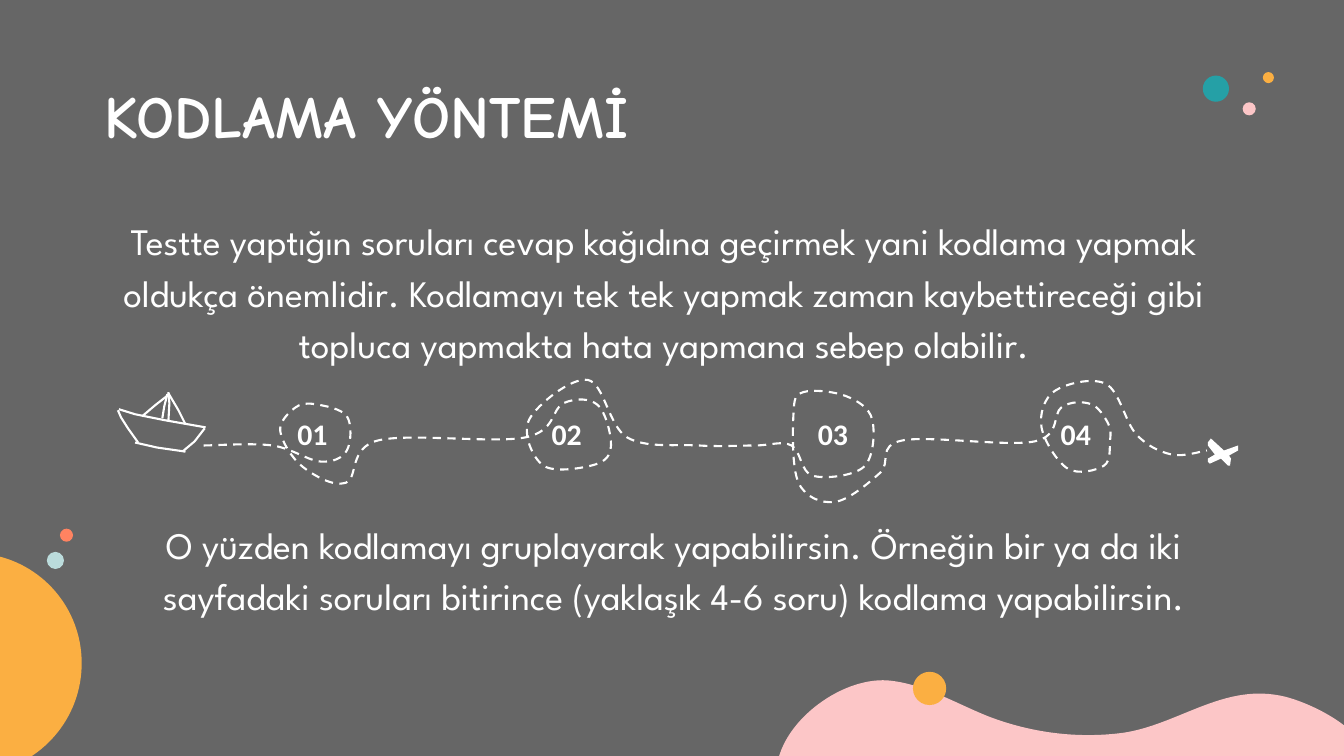
from dataclasses import dataclass
from itertools import pairwise

from lxml.etree import SubElement
from pptx import Presentation
from pptx.dml.color import RGBColor
from pptx.enum.dml import MSO_LINE_DASH_STYLE as Dash
from pptx.enum.shapes import MSO_SHAPE as Preset
from pptx.enum.text import MSO_ANCHOR as Anchor, PP_ALIGN as Align
from pptx.oxml.ns import qn
from pptx.util import Inches, Pt

Point = tuple[float, float]

GRAY, WHITE, PINK, ORANGE = "666666", "FFFFFF", "FCC6C7", "FBAF42"
TEAL, MINT, CORAL = "25A0A6", "BBDCDC", "FF8361"


@dataclass
class Dot:
    x: float
    y: float
    size: float
    color: str


@dataclass
class Label:
    text: str
    left: float
    top: float
    width: float
    height: float
    font: str
    size: float
    bold: bool = False
    align: Align = Align.CENTER
    spacing: float = 1.0


DOTS = [
    Dot(0.55, 5.56, 0.17, MINT),
    Dot(0.66, 5.31, 0.13, CORAL),
    Dot(9.22, 6.83, 0.33, ORANGE),
    Dot(12.58, 0.77, 0.11, ORANGE),
    Dot(12.39, 1.08, 0.13, PINK),
    Dot(12.06, 0.88, 0.26, TEAL),
]

WAVE: list[Point] = [
    (13.56, 7.55),
    (13.56, 7.22), (12.93, 6.94), (12.69, 6.9),
    (12.12, 6.79), (11.68, 7.19), (11.14, 7.27),
    (10.69, 7.33), (10.23, 7.27), (9.81, 7.11),
    (9.48, 6.98), (9.16, 6.78), (8.8, 6.75),
    (8.33, 6.72), (7.72, 7.18), (7.7, 7.66),
]
SUN: list[Point] = [
    (-0.11, 7.67),
    (0.41, 7.58), (0.81, 7.13), (0.81, 6.58),
    (0.81, 6.03), (0.41, 5.58), (-0.11, 5.5),
]

BOAT: list[list[Point]] = [
    [(1.18, 4.06), (1.34, 4.11), (1.64, 4.17), (2.04, 4.24)],
    [(1.17, 4.07), (1.2, 4.14), (1.27, 4.25), (1.37, 4.39)],
    [(1.34, 4.39), (1.56, 4.44), (1.84, 4.48)],
    [(2.03, 4.25), (1.93, 4.38), (1.81, 4.48)],
    [(1.68, 3.91), (1.54, 4.02), (1.41, 4.13)],
    [(1.67, 3.9), (1.77, 4.07), (1.84, 4.21)],
    [(1.66, 3.91), (1.63, 4.03), (1.61, 4.15)],
    [(1.67, 3.89), (1.68, 4.0), (1.67, 4.18)],
]

ROUTE: list[Point] = [
    (2.02, 4.42), (2.7, 4.42), (3.18, 4.58), (3.44, 4.47), (3.44, 4.13),
    (3.12, 4.01), (2.92, 4.05), (2.78, 4.28), (3, 4.63), (3.43, 4.79),
    (3.75, 4.37), (5.21, 4.34), (5.59, 4), (5.93, 4.02), (6.06, 4.42),
    (5.9, 4.61), (5.39, 4.62), (5.25, 4.16), (5.83, 3.77), (6.22, 4.34),
    (6.93, 4.42), (7.49, 4.42), (7.85, 4.42), (8.06, 4.72), (8.57, 4.63),
    (8.65, 4.16), (8.39, 3.93), (7.97, 3.89), (7.87, 4.1), (7.92, 4.79),
    (8.28, 4.98), (8.73, 4.69), (8.95, 4.37), (10.26, 4.38), (10.53, 4.04),
    (10.82, 4.01), (10.99, 4.2), (11.01, 4.37), (10.95, 4.62), (10.59, 4.65),
    (10.33, 4.24), (10.46, 3.88), (10.97, 3.81), (11.27, 4.31), (11.62, 4.51),
    (11.97, 4.47),
]

CROSS: list[Point] = [
    (12.01, 4.35), (11.98, 4.39), (11.98, 4.42), (12.05, 4.51), (11.98, 4.55),
    (11.98, 4.58), (12, 4.6), (12.11, 4.55), (12.18, 4.62), (12.2, 4.62),
    (12.21, 4.55), (12.19, 4.52), (12.28, 4.47), (12.28, 4.42), (12.14, 4.47),
]

INTRO = (
    "Testte yaptığın soruları cevap kağıdına geçirmek yani kodlama yapmak "
    "oldukça önemlidir. Kodlamayı tek tek yapmak zaman kaybettireceği gibi "
    "topluca yapmakta hata yapmana sebep olabilir."
)
ADVICE = (
    "O yüzden kodlamayı gruplayarak yapabilirsin. Örneğin bir ya da iki "
    "sayfadaki soruları bitirince (yaklaşık 4-6 soru) kodlama yapabilirsin."
)
STOP_LEFTS = [2.76, 5.28, 7.92, 10.33]
LABELS = [
    Label("KODLAMA YÖNTEMİ", 0.91, 0.65, 11.37, 0.84, "Comic Neue", 42.7, True, Align.LEFT),
    *(
        Label(f"{number:02}", left, 3.99, 0.68, 0.56, "Calibri", 21.3, True)
        for number, left in enumerate(STOP_LEFTS, 1)
    ),
    Label(INTRO, 0.89, 1.97, 11.4, 1.57, "League Spartan", 26.7, spacing=1.15),
    Label(ADVICE, 1.17, 4.98, 11.04, 1.67, "League Spartan", 26.7, spacing=1.15),
]


def rgb(color: str) -> RGBColor:
    return RGBColor.from_string(color)


def spline(anchors: list[Point]) -> list[Point]:
    padded = [anchors[0], *anchors, anchors[-1]]
    handles = [
        ((after[0] - before[0]) / 6, (after[1] - before[1]) / 6)
        for before, after in zip(padded, padded[2:])
    ]
    points = [anchors[0]]
    for (a, u), (b, v) in pairwise(zip(anchors, handles)):
        points += [(a[0] + u[0], a[1] + u[1]), (b[0] - v[0], b[1] - v[1]), b]
    return points


def draw_outline(page, points: list[Point], close: bool = False):
    start, *rest = [(Inches(x), Inches(y)) for x, y in points]
    builder = page.shapes.build_freeform(*start, scale=1.0)
    builder.add_line_segments(rest, close=close)
    shape = builder.convert_to_shape()
    shape.shadow.inherit = False
    return shape


def bend(shape) -> None:
    segments = list(shape.element.iter(qn("a:lnTo")))
    for first in range(0, len(segments), 3):
        curve = SubElement(segments[first].getparent(), qn("a:cubicBezTo"))
        segments[first].addprevious(curve)
        for segment in segments[first:first + 3]:
            curve.append(segment[0])
            segment.getparent().remove(segment)


def fill(shape, color: str) -> None:
    shape.fill.solid()
    shape.fill.fore_color.rgb = rgb(color)
    shape.line.fill.background()


def stroke(shape, color: str) -> None:
    shape.fill.background()
    shape.line.color.rgb = rgb(color)
    shape.line.width = Pt(1.5)


def draw_blob(page, points: list[Point], color: str) -> None:
    blob = draw_outline(page, points, close=True)
    bend(blob)
    fill(blob, color)


def draw_dot(page, dot: Dot) -> None:
    left, top = dot.x - dot.size / 2, dot.y - dot.size / 2
    shape = page.shapes.add_shape(
        Preset.OVAL, Inches(left), Inches(top), Inches(dot.size), Inches(dot.size)
    )
    shape.shadow.inherit = False
    fill(shape, dot.color)


def draw_label(page, label: Label) -> None:
    box = page.shapes.add_textbox(
        Inches(label.left), Inches(label.top), Inches(label.width), Inches(label.height)
    )
    frame = box.text_frame
    frame.word_wrap = True
    frame.vertical_anchor = Anchor.TOP
    frame.margin_left = frame.margin_right = Inches(0.13)
    frame.margin_top = frame.margin_bottom = Inches(0.13)
    para = frame.paragraphs[0]
    para.alignment = label.align
    para.line_spacing = label.spacing
    span = para.add_run()
    span.text = label.text
    span.font.name = label.font
    span.font.size = Pt(label.size)
    span.font.bold = label.bold
    span.font.color.rgb = rgb(WHITE)


def main() -> None:
    deck = Presentation()
    deck.slide_width, deck.slide_height = Inches(13.33), Inches(7.5)
    page = deck.slides.add_slide(deck.slide_layouts[6])
    page.background.fill.solid()
    page.background.fill.fore_color.rgb = rgb(GRAY)
    draw_blob(page, WAVE, PINK)
    draw_blob(page, SUN, ORANGE)
    for dot in DOTS:
        draw_dot(page, dot)
    for plank in BOAT:
        stroke(draw_outline(page, plank), WHITE)
    route = draw_outline(page, spline(ROUTE))
    bend(route)
    stroke(route, WHITE)
    route.line.dash_style = Dash.DASH
    fill(draw_outline(page, CROSS, close=True), WHITE)
    for label in LABELS:
        draw_label(page, label)
    deck.save("out.pptx")


if __name__ == "__main__":
    main()
